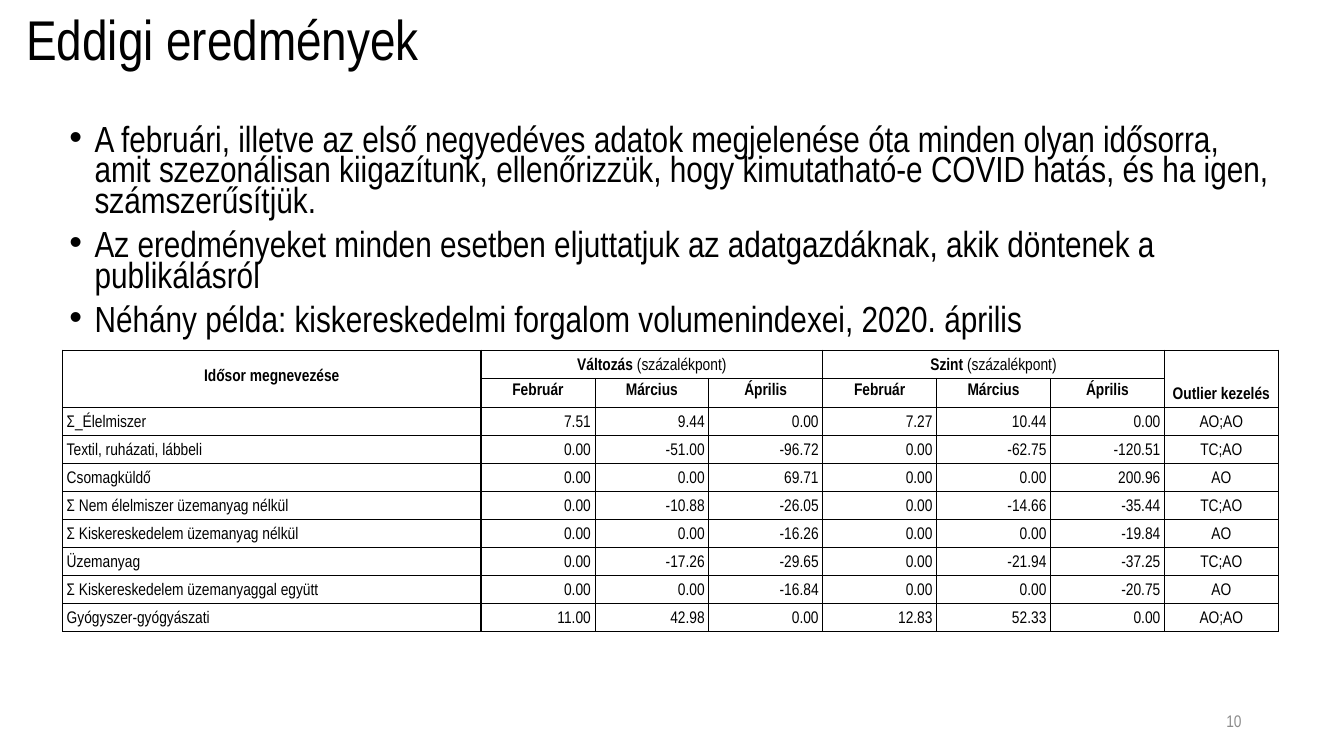
from lxml import etree
from pptx import Presentation
from pptx import util as u
from pptx.dml import color
from pptx.enum import text
from pptx.oxml import ns

TITLE = "Eddigi eredmények"
PAGE = "10"
FINDINGS = [
    "A februári, illetve az első negyedéves adatok megjelenése óta minden olyan idősorra, "
    "amit szezonálisan kiigazítunk, ellenőrizzük, hogy kimutatható-e COVID hatás, és ha igen, "
    "számszerűsítjük.",
    "Az eredményeket minden esetben eljuttatjuk az adatgazdáknak, akik döntenek a publikálásról",
    "Néhány példa: kiskereskedelmi forgalom volumenindexei, 2020. április",
]
SERIES_HEAD = "Idősor megnevezése"
OUTLIER_HEAD = "Outlier kezelés"
MEASURES = ["Változás ", "Szint "]
MEASURE_UNIT = "(százalékpont)"
MONTHS = ["Február", "Március", "Április"]
SERIES = [
    ("Σ_Élelmiszer", 7.51, 9.44, 0, 7.27, 10.44, 0, "AO;AO"),
    ("Textil, ruházati, lábbeli", 0, -51, -96.72, 0, -62.75, -120.51, "TC;AO"),
    ("Csomagküldő", 0, 0, 69.71, 0, 0, 200.96, "AO"),
    ("Σ Nem élelmiszer üzemanyag nélkül", 0, -10.88, -26.05, 0, -14.66, -35.44, "TC;AO"),
    ("Σ Kiskereskedelem üzemanyag nélkül", 0, 0, -16.26, 0, 0, -19.84, "AO"),
    ("Üzemanyag", 0, -17.26, -29.65, 0, -21.94, -37.25, "TC;AO"),
    ("Σ Kiskereskedelem üzemanyaggal együtt", 0, 0, -16.84, 0, 0, -20.75, "AO"),
    ("Gyógyszer-gyógyászati", 11, 42.98, 0, 12.83, 52.33, 0, "AO;AO"),
]

THEME = {
    "font": "Arial Narrow",
    "ink": "000000",
    "muted": "8C8C8C",
    "title": 40,
    "body": 25.9,
    "small": 12,
    "thick": 1,
    "thin": 0.5,
}
LEFT, CENTER, RIGHT = text.PP_ALIGN.LEFT, text.PP_ALIGN.CENTER, text.PP_ALIGN.RIGHT
MIDDLE, BOTTOM = text.MSO_ANCHOR.MIDDLE, text.MSO_ANCHOR.BOTTOM
BULLET_INDENT = 18
SERIES_WIDTH, VALUE_WIDTH = 298.8, 81.36
ROW_HEIGHT, MONTH_ROW_HEIGHT = 20, 20.9
CELL_INSET = 2.9
LAST = len(SERIES[0]) - 1
THICK_COLUMNS = {0, 1, 1 + len(MONTHS), LAST + 1}
THICK_ROWS = {0, 2}


def apply(target, formats):
    for name, value in formats.items():
        setattr(target, name, value)


def box(left, top, width, height):
    return dict(zip(("left", "top", "width", "height"), map(u.Pt, (left, top, width, height))))


def write(paragraph, words, size, ink="ink", bold=False):
    run = paragraph.add_run()
    run.text = words
    apply(run.font, {"name": THEME["font"], "size": u.Pt(size), "bold": bold})
    run.font.color.rgb = color.RGBColor.from_string(THEME[ink])


def draw_borders(cell, row, column):
    props = cell._tc.get_or_add_tcPr()
    right, bottom = column + cell.span_width, row + cell.span_height
    if not cell.is_merge_origin:
        right, bottom = column + 1, row + 1
    edges = {
        "a:lnL": column in THICK_COLUMNS,
        "a:lnR": right in THICK_COLUMNS,
        "a:lnT": row in THICK_ROWS and (row, column) != (2, LAST),
        "a:lnB": bottom in THICK_ROWS and column != LAST,
    }
    for tag, thick in edges.items():
        weight = THEME["thick" if thick else "thin"]
        line = etree.SubElement(props, ns.qn(tag), w=str(int(u.Pt(weight))))
        fill = etree.SubElement(line, ns.qn("a:solidFill"))
        etree.SubElement(fill, ns.qn("a:srgbClr"), val=THEME["ink"])


def fill_cell(table, row, column, parts, align=CENTER, anchor=BOTTOM):
    cell = table.cell(row, column)
    apply(cell, {
        "vertical_anchor": anchor,
        "margin_left": u.Pt(CELL_INSET if align == LEFT else 0),
        "margin_right": u.Pt(CELL_INSET if align == RIGHT else 0),
        "margin_top": 0,
        "margin_bottom": u.Pt(CELL_INSET),
    })
    paragraph = cell.text_frame.paragraphs[0]
    paragraph.alignment = align
    for words, bold in parts:
        write(paragraph, words, THEME["small"], bold=bold)
    draw_borders(cell, row, column)
    cell.fill.background()


def add_title(slide):
    title = slide.shapes.title
    apply(title, box(11.5, 0, 828, 60))
    apply(title.text_frame, {"vertical_anchor": MIDDLE, "word_wrap": True})
    heading = title.text_frame.paragraphs[0]
    apply(heading, {"alignment": LEFT, "line_spacing": 0.9})
    write(heading, TITLE, THEME["title"])


def add_findings(slide):
    frame = slide.shapes.add_textbox(**box(42.5, 87.8, 876.2, 162.7)).text_frame
    frame.word_wrap = True
    for index, finding in enumerate(FINDINGS):
        paragraph = frame.paragraphs[0] if index == 0 else frame.add_paragraph()
        props = paragraph._p.get_or_add_pPr()
        props.set("marL", str(int(u.Pt(BULLET_INDENT))))
        props.set("indent", str(-int(u.Pt(BULLET_INDENT))))
        etree.SubElement(props, ns.qn("a:buFont"), typeface="Arial")
        etree.SubElement(props, ns.qn("a:buChar"), char="•")
        apply(paragraph, {"line_spacing": 0.7, "space_before": u.Pt(10 if index else 0)})
        write(paragraph, finding, THEME["body"])


def add_series_table(slide):
    heights = [ROW_HEIGHT, MONTH_ROW_HEIGHT] + [ROW_HEIGHT] * len(SERIES)
    widths = [SERIES_WIDTH] + [VALUE_WIDTH] * LAST
    place = box(44.8, 250.2, sum(widths), sum(heights))
    table = slide.shapes.add_table(len(heights), len(widths), **place).table
    apply(table, {"first_row": False, "horz_banding": False})
    for row, height in zip(table.rows, heights):
        row.height = u.Pt(height)
    for column, width in zip(table.columns, widths):
        column.width = u.Pt(width)

    for column, head, anchor in ((0, SERIES_HEAD, MIDDLE), (LAST, OUTLIER_HEAD, BOTTOM)):
        table.cell(0, column).merge(table.cell(1, column))
        fill_cell(table, 0, column, [(head, True)], anchor=anchor)
    for index, measure in enumerate(MEASURES):
        first = 1 + index * len(MONTHS)
        table.cell(0, first).merge(table.cell(0, first + len(MONTHS) - 1))
        fill_cell(table, 0, first, [(measure, True), (MEASURE_UNIT, False)])
        for column, month in enumerate(MONTHS, first):
            fill_cell(table, 1, column, [(month, True)], anchor=MIDDLE)

    for row, (series, *values, outlier) in enumerate(SERIES, 2):
        fill_cell(table, row, 0, [(series, False)], LEFT)
        for column, value in enumerate(values, 1):
            fill_cell(table, row, column, [(f"{value:.2f}", False)], RIGHT)
        fill_cell(table, row, LAST, [(outlier, False)])


def add_page_number(slide):
    frame = slide.shapes.add_textbox(**box(678, 500.5, 216, 28.8)).text_frame
    apply(frame, {"word_wrap": True, "vertical_anchor": MIDDLE})
    frame.paragraphs[0].alignment = RIGHT
    write(frame.paragraphs[0], PAGE, THEME["small"], "muted")


def main():
    deck = Presentation()
    apply(deck, {"slide_width": u.Pt(960), "slide_height": u.Pt(540)})
    slide = deck.slides.add_slide(deck.slide_layouts.get_by_name("Title Only"))
    for add_part in (add_page_number, add_title, add_findings, add_series_table):
        add_part(slide)
    deck.save("out.pptx")


if __name__ == "__main__":
    main()
